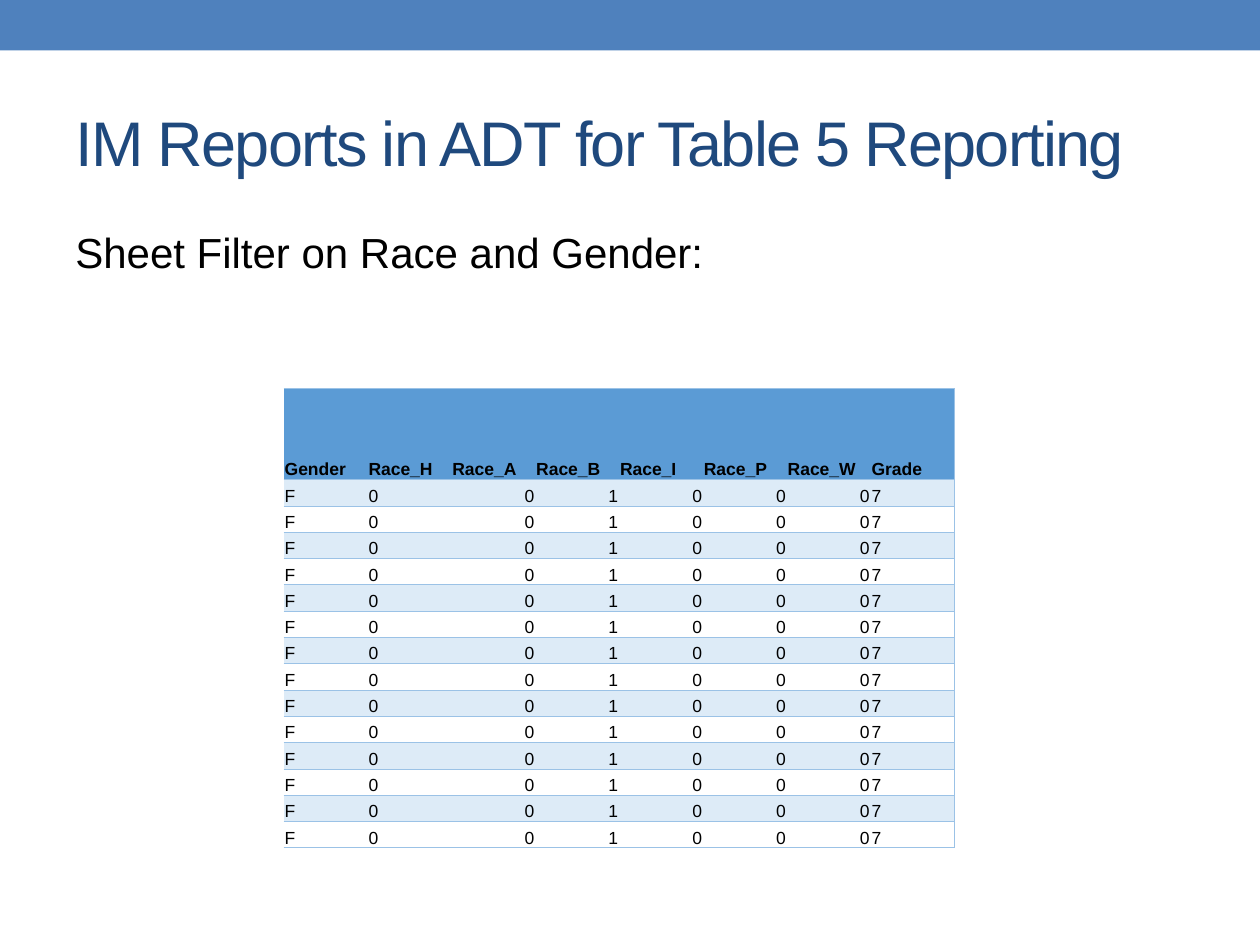
"""Build the slide with the race and gender filter table."""
from dataclasses import dataclass

from lxml.etree import SubElement
from pptx import Presentation
from pptx.dml.color import RGBColor
from pptx.enum.shapes import MSO_SHAPE
from pptx.enum.text import MSO_ANCHOR, MSO_AUTO_SIZE, PP_ALIGN
from pptx.oxml.ns import qn
from pptx.util import Cm, Pt


@dataclass(frozen=True)
class Theme:
    font: str = "Arial"
    band: str = "4F81BD"
    title: str = "1F497D"
    text: str = "000000"
    header: str = "5B9BD5"
    stripe: str = "DDEBF7"
    border: str = "9BC2E6"
    title_size: int = 36
    body_size: int = 24
    table_size: int = 10


theme = Theme()


def format_text(paragraph, size, color, bold=False):
    for run in paragraph.runs:
        run.font.name = theme.font
        run.font.size = Pt(size)
        run.font.bold = bold
        run.font.color.rgb = RGBColor.from_string(color)


def add_border(cell, side):
    line = SubElement(cell._tc.get_or_add_tcPr(), qn(f"a:{side}"), w=str(Pt(0.5)))
    fill = SubElement(line, qn("a:solidFill"))
    SubElement(fill, qn("a:srgbClr"), val=theme.border)


presentation = Presentation()
presentation.slide_width = Cm(25.4)
presentation.slide_height = Cm(19.05)
slide = presentation.slides.add_slide(presentation.slide_layouts[5])

band = slide.shapes.add_shape(MSO_SHAPE.RECTANGLE, 0, 0, presentation.slide_width, Cm(1.02))
band.shadow.inherit = False
band.fill.solid()
band.fill.fore_color.rgb = RGBColor.from_string(theme.band)
band.line.fill.background()

title = slide.shapes.title
title.left, title.top, title.width, title.height = Cm(1.27), Cm(1.47), Cm(22.86), Cm(2.74)
title.text_frame.text = "IM Reports in ADT for Table 5 Reporting"
title.text_frame.auto_size = MSO_AUTO_SIZE.NONE
title.text_frame.vertical_anchor = MSO_ANCHOR.MIDDLE
paragraph = title.text_frame.paragraphs[0]
paragraph.alignment = PP_ALIGN.LEFT
format_text(paragraph, theme.title_size, theme.title)
paragraph.runs[0].font._element.set("spc", "-100")

body = slide.shapes.add_textbox(Cm(1.27), Cm(4.45), Cm(22.86), Cm(13.54))
body.text_frame.word_wrap = True
body.text_frame.text = "Sheet Filter on Race and Gender:"
paragraph = body.text_frame.paragraphs[0]
paragraph.space_before = Pt(4.8)
format_text(paragraph, theme.body_size, theme.text)

headers = ["Gender", "Race_H", "Race_A", "Race_B", "Race_I", "Race_P", "Race_W", "Grade"]
student = ["F", "0", "0", "1", "0", "0", "0", "7"]
rows = [headers] + [student] * 14
right_aligned = range(2, 7)
last_column = len(headers) - 1

frame = slide.shapes.add_table(len(rows), len(headers), Cm(5.72), Cm(7.83), Cm(13.54), Cm(9.26))
table = frame.table
table.first_row = False
table.horz_banding = False
table._tbl.tblPr.find(qn("a:tableStyleId")).text = "{2D5ABB26-0587-4C30-8999-92F81FD0307C}"
for column in table.columns:
    column.width = Cm(1.69)

for row_index, values in enumerate(rows):
    is_header = row_index == 0
    table.rows[row_index].height = Cm(1.84 if is_header else 0.53)
    for column_index, value in enumerate(values):
        cell = table.cell(row_index, column_index)
        cell.margin_left = cell.margin_right = cell.margin_top = Cm(0.02)
        cell.margin_bottom = 0
        cell.vertical_anchor = MSO_ANCHOR.BOTTOM
        cell.text_frame.text = value
        paragraph = cell.text_frame.paragraphs[0]
        if not is_header and column_index in right_aligned:
            paragraph.alignment = PP_ALIGN.RIGHT
        format_text(paragraph, theme.table_size, theme.text, is_header)
        for side in ["lnR", "lnT", "lnB"] if column_index == last_column else ["lnT", "lnB"]:
            add_border(cell, side)
        if is_header or row_index % 2:
            cell.fill.solid()
            cell.fill.fore_color.rgb = RGBColor.from_string(theme.header if is_header else theme.stripe)
        else:
            cell.fill.background()

presentation.save("out.pptx")
